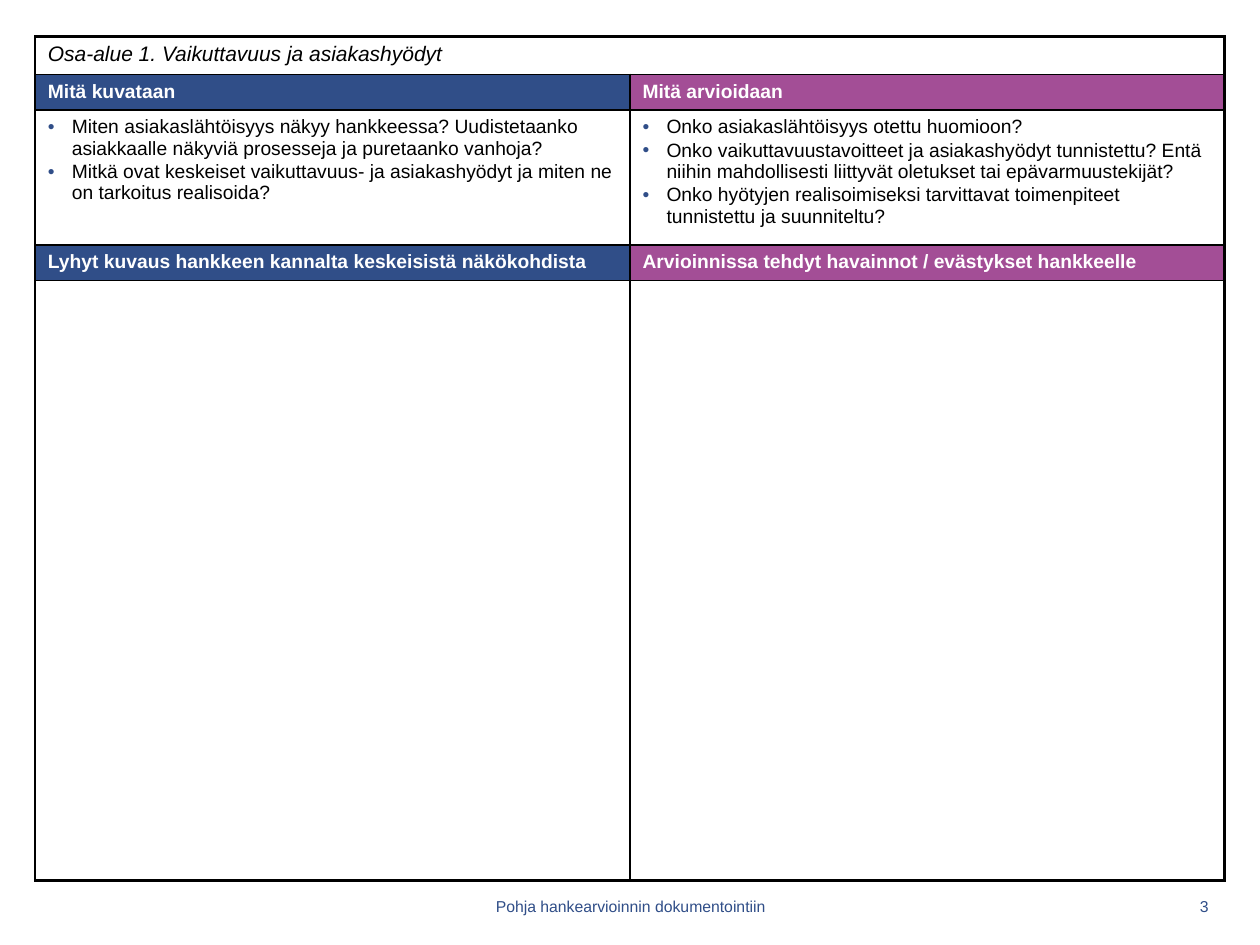
from lxml.etree import SubElement
from pptx import Presentation
from pptx.dml.color import RGBColor
from pptx.enum.text import MSO_ANCHOR as Anchor, PP_ALIGN as Align
from pptx.oxml import parse_xml
from pptx.oxml.ns import nsdecls, qn
from pptx.util import Inches, Pt

BLUE, PURPLE, WHITE, BLACK = "304E88", "A34E96", "FFFFFF", "000000"
TITLE = "Osa-alue 1. Vaikuttavuus ja asiakashyödyt"
HEADS = ["Mitä kuvataan", "Mitä arvioidaan"]
POINTS = [
    ["Miten asiakaslähtöisyys näkyy hankkeessa? Uudistetaanko asiakkaalle näkyviä prosesseja ja puretaanko vanhoja?",
     "Mitkä ovat keskeiset vaikuttavuus- ja asiakashyödyt ja miten ne on tarkoitus realisoida?"],
    ["Onko asiakaslähtöisyys otettu huomioon?",
     "Onko vaikuttavuustavoitteet ja asiakashyödyt tunnistettu? Entä niihin mahdollisesti liittyvät oletukset tai epävarmuustekijät?",
     "Onko hyötyjen realisoimiseksi tarvittavat toimenpiteet tunnistettu ja suunniteltu?"],
]
NOTES = ["Lyhyt kuvaus hankkeen kannalta keskeisistä näkökohdista",
         "Arvioinnissa tehdyt havainnot / evästykset hankkeelle"]
ROWS = [0.28, 0.27, 1.07, 0.27, 4.76]


def color(code):
    return RGBColor.from_string(code)


def style(para, size, code, bold=False, italic=False):
    for run in para.runs:
        font = run.font
        font.name, font.size = "Arial", Pt(size)
        font.bold, font.italic = bold, italic
        font.color.rgb = color(code)


def add_bullet(para):
    props = para._p.get_or_add_pPr()
    props.set("marL", str(Inches(0.19)))
    props.set("indent", str(-Inches(0.19)))
    tint = SubElement(props, qn("a:buClr"))
    SubElement(tint, qn("a:srgbClr"), val=BLUE)
    SubElement(props, qn("a:buFont"), typeface="Arial")
    SubElement(props, qn("a:buChar"), char="•")


def add_edges(cell, row, col):
    outer = {"L": col == 0, "R": col == 1 or row == 0,
             "T": row == 0, "B": row == len(ROWS) - 1}
    props = cell._tc.get_or_add_tcPr()
    for spot, (side, thick) in enumerate(outer.items()):
        width = Pt(1.5 if thick else 1)
        props.insert(spot, parse_xml(
            f'<a:ln{side} {nsdecls("a")} w="{width}"><a:solidFill>'
            f'<a:srgbClr val="{BLACK}"/></a:solidFill></a:ln{side}>'))


def fill_cell(cell, lines, size=11, code=BLACK, back=WHITE,
              bold=False, italic=False, bullets=False):
    cell.fill.solid()
    cell.fill.fore_color.rgb = color(back)
    frame = cell.text_frame
    frame.text = "\n".join(lines)
    for spot, para in enumerate(frame.paragraphs):
        if bullets:
            add_bullet(para)
        if spot:
            para.space_before = Pt(1)
        style(para, size, code, bold, italic)


def add_form(slide, left, top, width):
    frame = slide.shapes.add_table(len(ROWS), 2, Inches(left), Inches(top),
                                   Inches(width), Inches(sum(ROWS)))
    table = frame.table
    for row, height in zip(table.rows, ROWS):
        row.height = Inches(height)
    table.cell(0, 0).merge(table.cell(0, 1))
    fill_cell(table.cell(0, 0), [TITLE], size=12, italic=True)
    for col, back in enumerate([BLUE, PURPLE]):
        for row, heads in [(1, HEADS), (3, NOTES)]:
            fill_cell(table.cell(row, col), [heads[col]],
                      code=WHITE, back=back, bold=True)
        fill_cell(table.cell(2, col), POINTS[col], bullets=True)
        fill_cell(table.cell(4, col), [])
        for row in range(len(ROWS)):
            add_edges(table.cell(row, col), row, col)


def add_label(slide, left, top, width, height, text, align):
    box = slide.shapes.add_textbox(Inches(left), Inches(top),
                                   Inches(width), Inches(height))
    frame = box.text_frame
    frame.word_wrap = True
    frame.vertical_anchor = Anchor.MIDDLE
    frame.text = text
    para = frame.paragraphs[0]
    para.alignment = align
    style(para, 9, BLUE)


def add_footer(slide, top, height):
    add_label(slide, 3.42, top, 3.17, height,
              "Pohja hankearvioinnin dokumentointiin", Align.CENTER)
    add_label(slide, 9.17, top, 0.52, height, "3", Align.RIGHT)


def main():
    deck = Presentation()
    deck.slide_width, deck.slide_height = Inches(10), Inches(7.5)
    slide = deck.slides.add_slide(deck.slide_layouts[6])
    add_footer(slide, 7.03, 0.32)
    add_form(slide, 0.28, 0.29, 9.44)
    deck.save("out.pptx")


if __name__ == "__main__":
    main()
